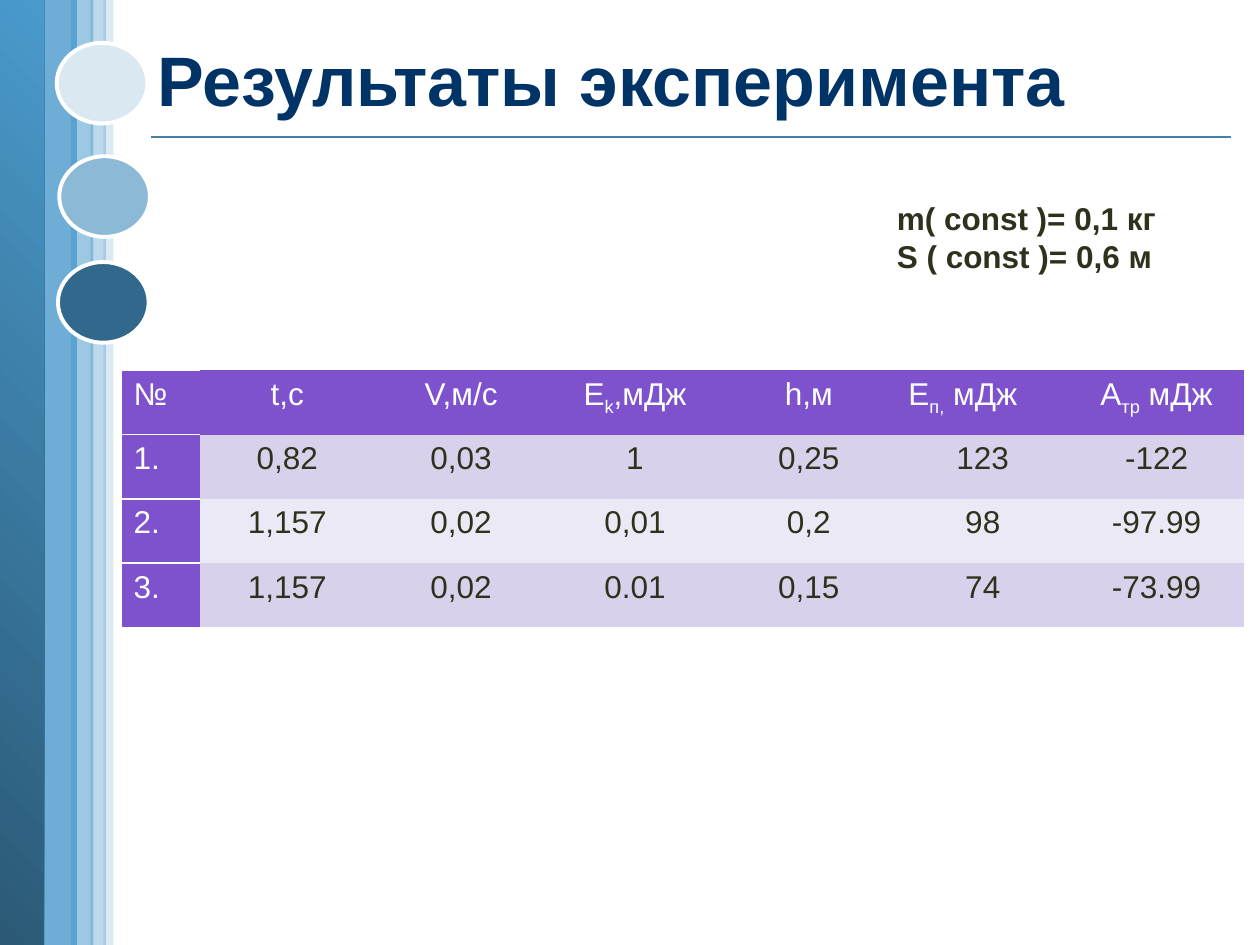
from pptx import Presentation
from pptx.dml.color import RGBColor
from pptx.enum.shapes import MSO_CONNECTOR as CONN, MSO_SHAPE as SHAPE
from pptx.enum.text import MSO_ANCHOR as ANCHOR, PP_ALIGN as ALIGN
from pptx.oxml import parse_xml
from pptx.oxml.ns import nsdecls, qn
from pptx.oxml.xmlchemy import OxmlElement
from pptx.util import Inches, Pt

C = {
    "blue": "4A9ACC", "deep": "2B5976", "rule": "4582A7", "title": "003366",
    "white": "FFFFFF", "text": "30311D", "head": "7E52CC",
    "odd": "D8D1EC", "even": "ECE9F6",
    "pale": "D9E8F1", "mid": "8CBAD6", "dark": "31688B",
}
NO_STYLE = "{2D5ABB26-0587-4C30-8999-92F81FD0307C}"


def rgb(name):
    return RGBColor.from_string(C[name])


def add_text(p, text, size=18, color="text", bold=False, align=ALIGN.LEFT, sub=False):
    """Append a formatted run to a paragraph."""
    p.alignment = align
    r = p.add_run()
    r.text = text
    r.font.name, r.font.size, r.font.bold = "Arial", Pt(size), bold
    r.font.color.rgb = rgb(color)
    if sub:
        r.font._element.set("baseline", "-25000")


prs = Presentation()
prs.slide_width, prs.slide_height = Inches(10), Inches(7.5)
s = prs.slides.add_slide(prs.slide_layouts[5])

rule = s.shapes.add_connector(CONN.STRAIGHT, Inches(1.2), Inches(1.09), Inches(9.77), Inches(1.09))
rule.line.color.rgb = rgb("rule")
rule.line.width = Pt(1)
rule._element.spPr.append(OxmlElement("a:effectLst"))

stripes = [
    (0.3, 0, 0.31, 7.53, 80), (-0.01, 0, 0.36, 7.5, None), (0.82, -0.02, 0.08, 7.52, 20),
    (0.56, 0, 0.18, 7.51, 54), (0.72, 0, 0.12, 7.52, 37),
]
for x, y, w, h, alpha in stripes:
    sp = s.shapes.add_shape(SHAPE.RECTANGLE, Inches(x), Inches(y), Inches(w), Inches(h))
    sp.shadow.inherit = False
    sp.line.fill.background()
    if alpha is None:
        sp.fill.gradient()
        sp.fill.gradient_angle = 45
        for stop, name in zip(sp.fill.gradient_stops, ("deep", "blue")):
            stop.color.rgb = rgb(name)
    else:
        sp.fill.solid()
        sp.fill.fore_color.rgb = rgb("blue")
        clr = sp._element.spPr.find(qn("a:solidFill"))[0]
        clr.append(parse_xml(f'<a:alpha {nsdecls("a")} val="{alpha * 1000}"/>'))

title = s.shapes.title
title.left, title.top, title.width, title.height = Inches(1.15), Inches(0.07), Inches(8.7), Inches(1.11)
title.text_frame.vertical_anchor = ANCHOR.MIDDLE
add_text(title.text_frame.paragraphs[0], "Результаты эксперимента", size=40, color="title", bold=True)

for x, y, name in [(0.45, 0.34, "pale"), (0.47, 1.24, "mid"), (0.46, 2.08, "dark")]:
    sp = s.shapes.add_shape(SHAPE.OVAL, Inches(x), Inches(y), Inches(0.72), Inches(0.64))
    sp.shadow.inherit = False
    sp.fill.solid()
    sp.fill.fore_color.rgb = rgb(name)
    sp.line.color.rgb = rgb("white")
    sp.line.width = Pt(2.25)

rows = [
    ["№", "t,с", "V,м/с", ("Е", "k", ",мДж"), "h,м", ("Е", "п,", " мДж"), ("А", "тр", " мДж")],
    ["1.", "0,82", "0,03", "1", "0,25", "123", "-122"],
    ["2.", "1,157", "0,02", "0,01", "0,2", "98", "-97.99"],
    ["3.", "1,157", "0,02", "0.01", "0,15", "74", "-73.99"],
]
frame = s.shapes.add_table(4, 7, Inches(0.96), Inches(2.94), Inches(8.91), Inches(2.04))
frame._element.xpath(".//a:tableStyleId")[0].text = NO_STYLE
table = frame.table
for j, col in enumerate(table.columns):
    col.width = Inches(1.38 if j else 0.63)
for i, values in enumerate(rows):
    table.rows[i].height = Inches(0.51)
    for j, value in enumerate(values):
        cell = table.cell(i, j)
        head = i == 0 or j == 0
        left = j == 0 or (i, j) == (0, 5)
        if j == 0:
            for side in ("lnL", "lnT", "lnB"):
                cell._tc.get_or_add_tcPr().append(parse_xml(
                    f'<a:{side} {nsdecls("a")} w="12700"><a:solidFill>'
                    f'<a:srgbClr val="{C["white"]}"/></a:solidFill></a:{side}>'))
        cell.fill.solid()
        cell.fill.fore_color.rgb = rgb("head" if head else "odd" if i % 2 else "even")
        parts = (value,) if isinstance(value, str) else value
        for k, part in enumerate(parts):
            add_text(cell.text_frame.paragraphs[0], part, color="white" if head else "text",
                     align=ALIGN.LEFT if left else ALIGN.CENTER, sub=k == 1)

box = s.shapes.add_textbox(Inches(7.02), Inches(1.53), Inches(2.76), Inches(0.71))
tf = box.text_frame
tf.word_wrap = True
add_text(tf.paragraphs[0], "m( const )= 0,1 кг", bold=True)
add_text(tf.add_paragraph(), "S ( const )= 0,6 м", bold=True)

prs.save("out.pptx")
